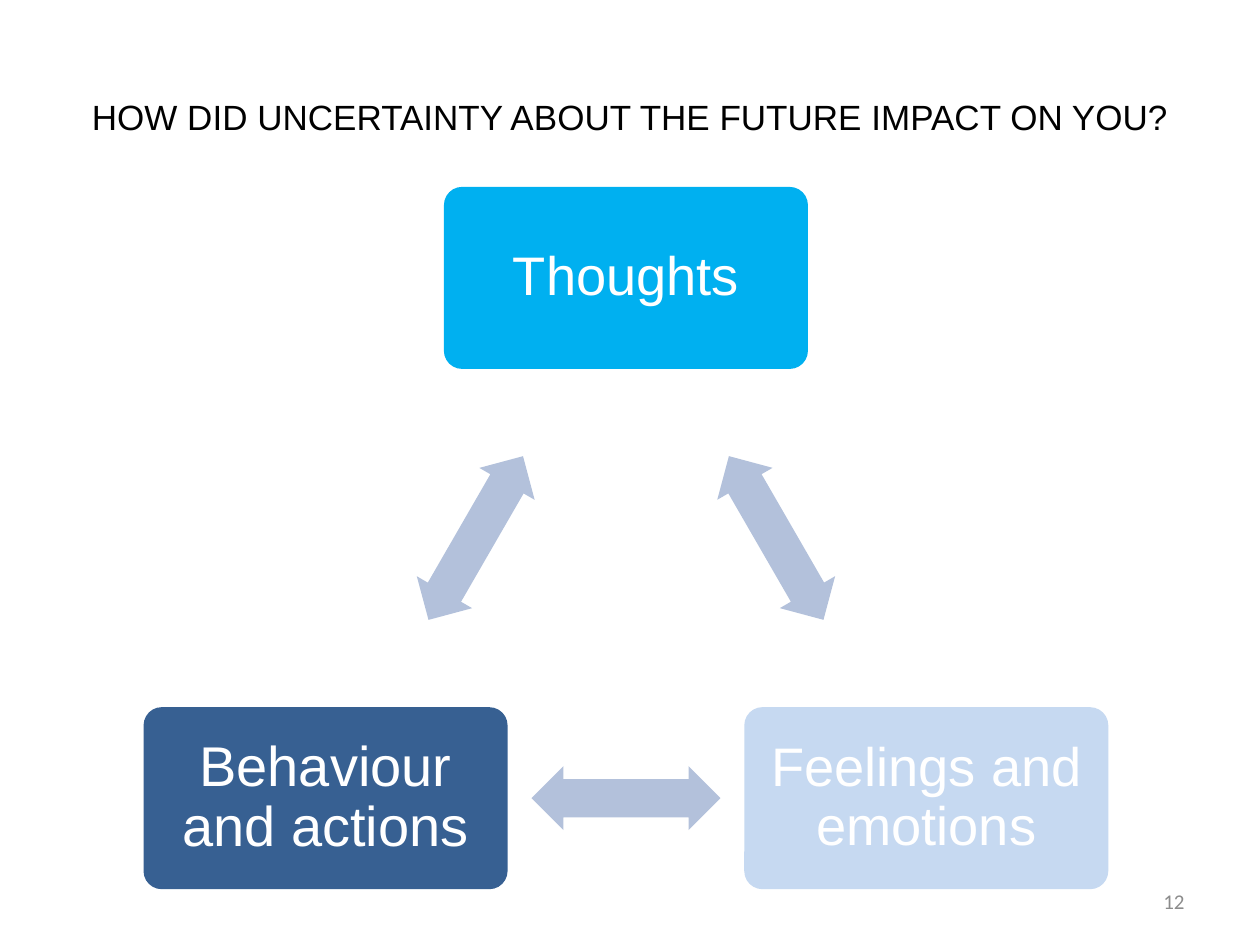
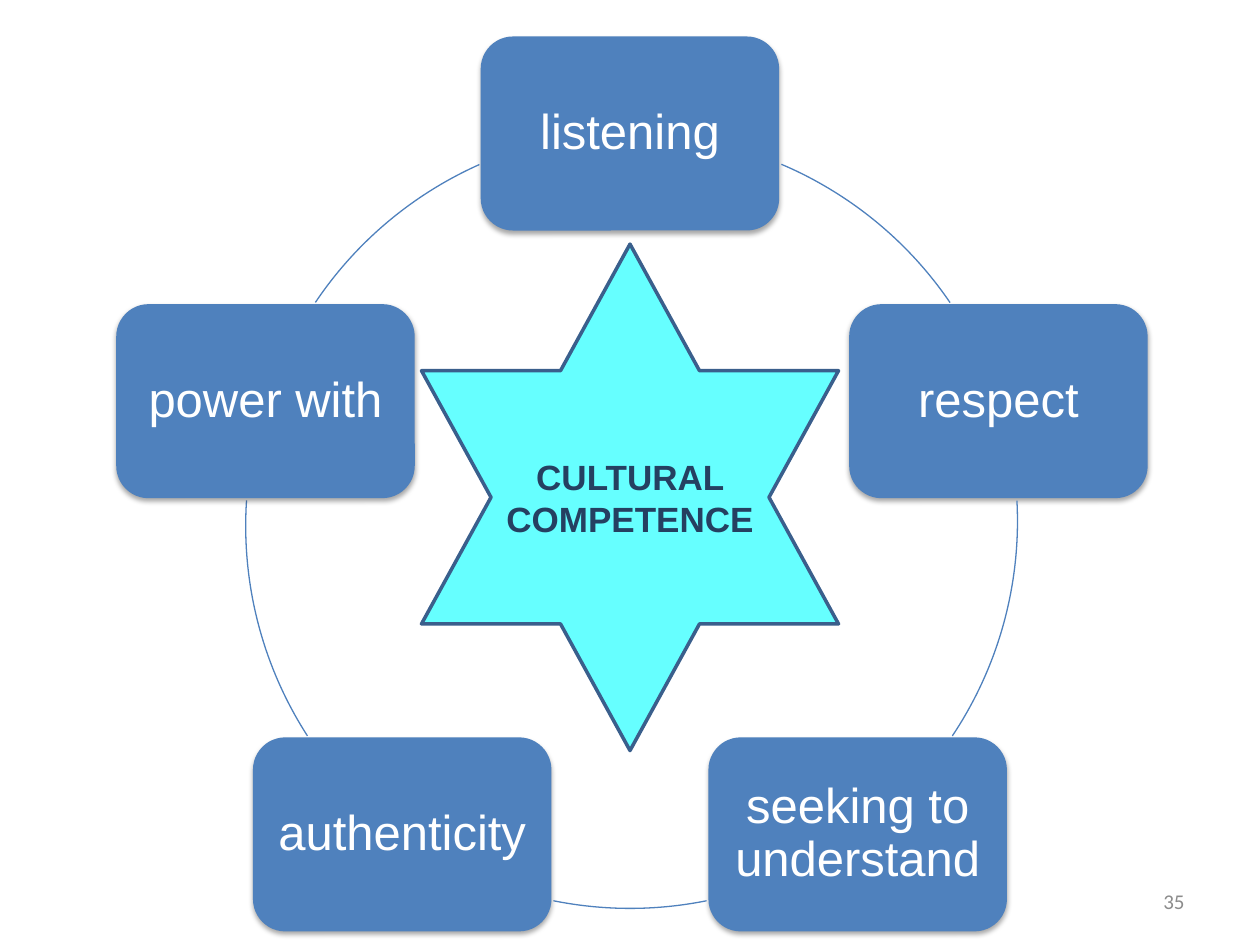
from math import cos, radians, sin

from lxml.etree import SubElement
from pptx import Presentation
from pptx.dml.color import RGBColor
from pptx.enum.shapes import MSO_SHAPE
from pptx.enum.text import MSO_ANCHOR, PP_ALIGN
from pptx.oxml.ns import qn
from pptx.util import Pt

# Shared look
TEXT_FONT, NUMBER_FONT = "Arial", "Calibri"
BLACK, WHITE, GREY = "000000", "FFFFFF", "8C8C8C"
SKY, PALE_BLUE, NAVY, ARROW_BLUE = "00B0F0", "C6D9F1", "376092", "B3C1DB"
VALUE_BLUE, STAR_CYAN, STAR_EDGE, STAR_INK = "4F81BD", "66FFFF", "3A5F8C", "254061"

TITLE_ONLY, BLANK = 5, 6


def rgb(hex_color):
    return RGBColor.from_string(hex_color)


def write(frame, text, size=20, color=BLACK, font=TEXT_FONT, bold=False,
          align=PP_ALIGN.CENTER, spacing=None, inset=None):
    """Put formatted text, centred vertically, into a text frame."""
    frame.word_wrap = True
    frame.vertical_anchor = MSO_ANCHOR.MIDDLE
    if inset is not None:
        frame.margin_left = frame.margin_right = Pt(inset)
        frame.margin_top = frame.margin_bottom = Pt(inset)
    paragraph = frame.paragraphs[0]
    paragraph.alignment = align
    paragraph.line_spacing = spacing
    run = paragraph.add_run()
    run.text = text
    run.font.name, run.font.size, run.font.bold = font, Pt(size), bold
    run.font.color.rgb = rgb(color)


def place(element, left, top, width, height):
    element.left, element.top = Pt(left), Pt(top)
    element.width, element.height = Pt(width), Pt(height)


def shifted(point, shift):
    return point[0] + shift[0], point[1] + shift[1]


def ring_point(center, radius, angle):
    """Point on a circle, with the angle in degrees clockwise from the top."""
    return shifted(center, (radius * sin(radians(angle)), -radius * cos(radians(angle))))


def add_centered(slide, preset, center, size, fill=None, line=None, line_width=0.75,
                 adjustments=()):
    """Add a preset shape around its centre point."""
    (x, y), (width, height) = center, size
    shape = slide.shapes.add_shape(preset, Pt(x - width / 2), Pt(y - height / 2),
                                   Pt(width), Pt(height))
    for i, value in enumerate(adjustments):
        shape.adjustments[i] = value
    shape.shadow.inherit = False
    if fill:
        shape.fill.solid()
        shape.fill.fore_color.rgb = rgb(fill)
    else:
        shape.fill.background()
    if line:
        shape.line.color.rgb = rgb(line)
        shape.line.width = Pt(line_width)
    else:
        shape.line.fill.background()
    return shape


def add_box(slide, text, center, size, fill, corner, text_size, inset):
    box = add_centered(slide, MSO_SHAPE.ROUNDED_RECTANGLE, center, size, fill,
                       adjustments=[corner])
    write(box.text_frame, text, size=text_size, color=WHITE, spacing=0.9, inset=inset)
    return box


def add_soft_shadow(shape):
    effects = shape._element.spPr.find(qn("a:effectLst"))
    shadow = SubElement(effects, qn("a:outerShdw"), blurRad=str(Pt(3.1)),
                        dist=str(Pt(1.8)), dir="5400000", rotWithShape="0")
    color = SubElement(shadow, qn("a:srgbClr"), val=BLACK)
    SubElement(color, qn("a:alpha"), val="35000")


def add_arc(slide, center, radius, start, end, color):
    """Draw an arc between two angles, in degrees clockwise from the top."""
    # The preset counts 60000ths of a degree from the right, in units of 100000
    turns = [(angle - 90) % 360 * 0.6 for angle in (start, end)]
    add_centered(slide, MSO_SHAPE.ARC, center, (2 * radius, 2 * radius), line=color,
                 adjustments=turns)


def add_title(slide, text):
    title = slide.shapes.title
    place(title, 36, 21.6, 648, 90)
    write(title.text_frame, text)


def add_page_number(slide, number):
    footer = slide.shapes.add_textbox(Pt(516), Pt(500.5), Pt(168), Pt(28.75))
    write(footer.text_frame, str(number), size=12, color=GREY, font=NUMBER_FONT,
          align=PP_ALIGN.RIGHT)


def build_impact_slide(deck):
    slide = deck.slides.add_slide(deck.slide_layouts[TITLE_ONLY])
    add_title(slide, "HOW DID UNCERTAINTY ABOUT THE FUTURE IMPACT ON YOU?")

    # Triangle of responses, with a two-way arrow halfway along each side
    center, radius = (357.7, 357), 198.2
    responses = [("Thoughts", SKY, 31), ("Feelings and emotions", PALE_BLUE, 31),
                 ("Behaviour and actions", NAVY, 32)]
    for i, (response, fill, text_size) in enumerate(responses):
        angle = 120 * i
        add_box(slide, response, ring_point(center, radius, angle), (208, 104),
                fill, 0.1, text_size, 9.4)
        arrow = add_centered(slide, MSO_SHAPE.LEFT_RIGHT_ARROW,
                             ring_point(center, radius / 2, angle + 60),
                             (108, 36.5), ARROW_BLUE, adjustments=[0.6, 0.5])
        arrow.rotation = angle + 60
    add_page_number(slide, 12)


def build_competence_slide(deck):
    slide = deck.slides.add_slide(deck.slide_layouts[BLANK])

    # Ring of values: text, box shift, then the next arc's start, end and shift
    center, radius = (360, 297.7), 221.4
    still = (0, 0)
    values = [("listening", still, 23, 55.7, still),
              ("respect", still, 87, 123.7, still),
              ("seeking to understand", still, 168.6, 191.4, still),
              ("authenticity", still, 237.2, 273.8, (1.8, 2.9)),
              ("power with", (2.3, 0), 303.9, 336, (4, -1.4))]
    for i, (value, box_shift, start, end, arc_shift) in enumerate(values):
        spot = shifted(ring_point(center, radius, 72 * i), box_shift)
        box = add_box(slide, value, spot, (170.6, 110.9), VALUE_BLUE, 0.1667, 28, 8.6)
        add_soft_shadow(box)
        add_arc(slide, shifted(center, arc_shift), radius, start, end, VALUE_BLUE)
    add_page_number(slide, 35)

    # Central idea
    star = add_centered(slide, MSO_SHAPE.STAR_6_POINT, (360, 284.2), (238.3, 289.4),
                        STAR_CYAN, line=STAR_EDGE, line_width=2)
    write(star.text_frame, "CULTURAL COMPETENCE", color=STAR_INK, bold=True)


def main():
    deck = Presentation()
    deck.slide_width, deck.slide_height = Pt(720), Pt(540)
    build_impact_slide(deck)
    build_competence_slide(deck)
    deck.save("out.pptx")


if __name__ == "__main__":
    main()
